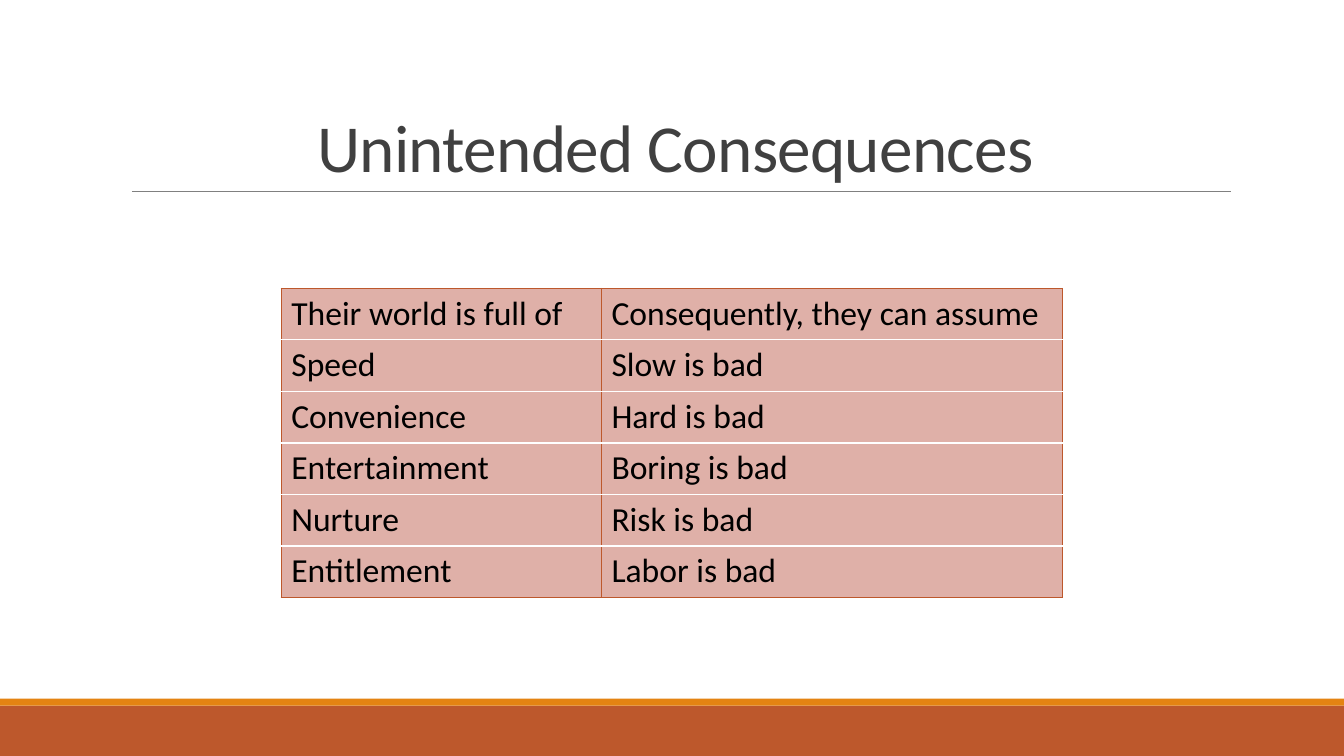
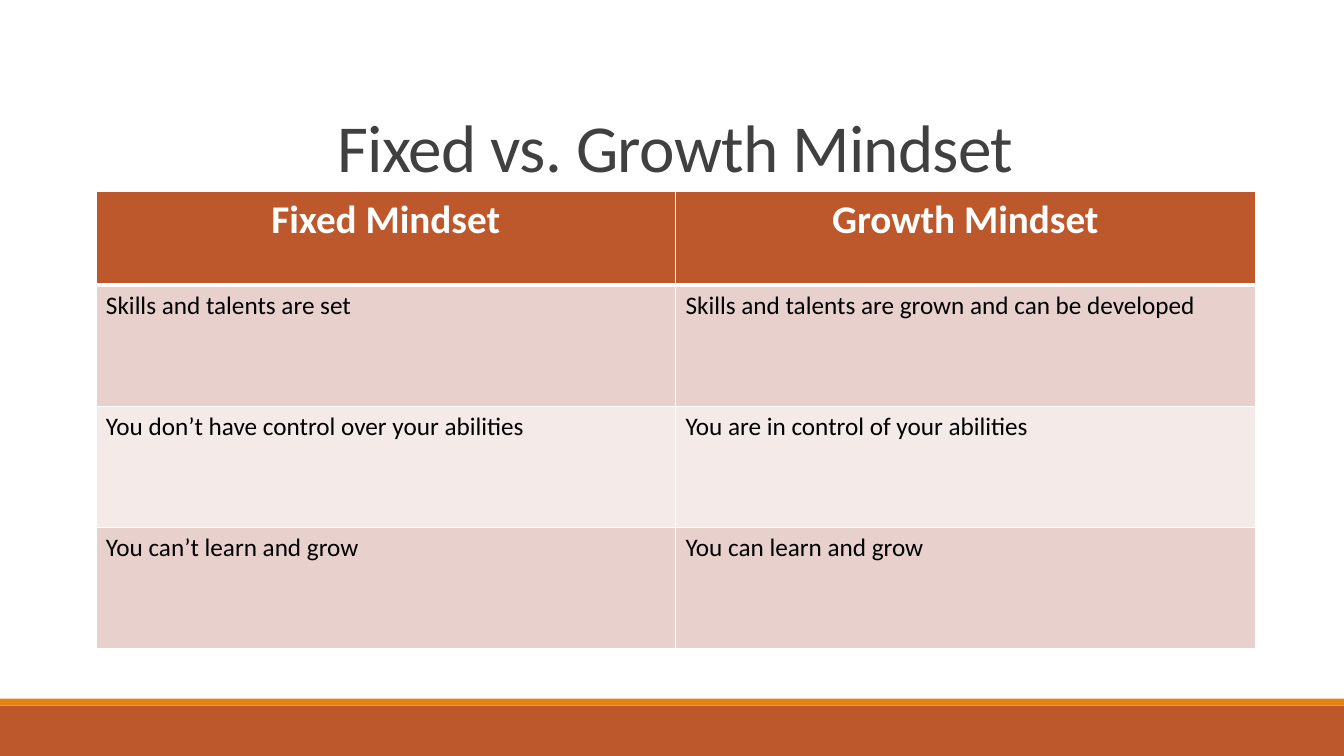
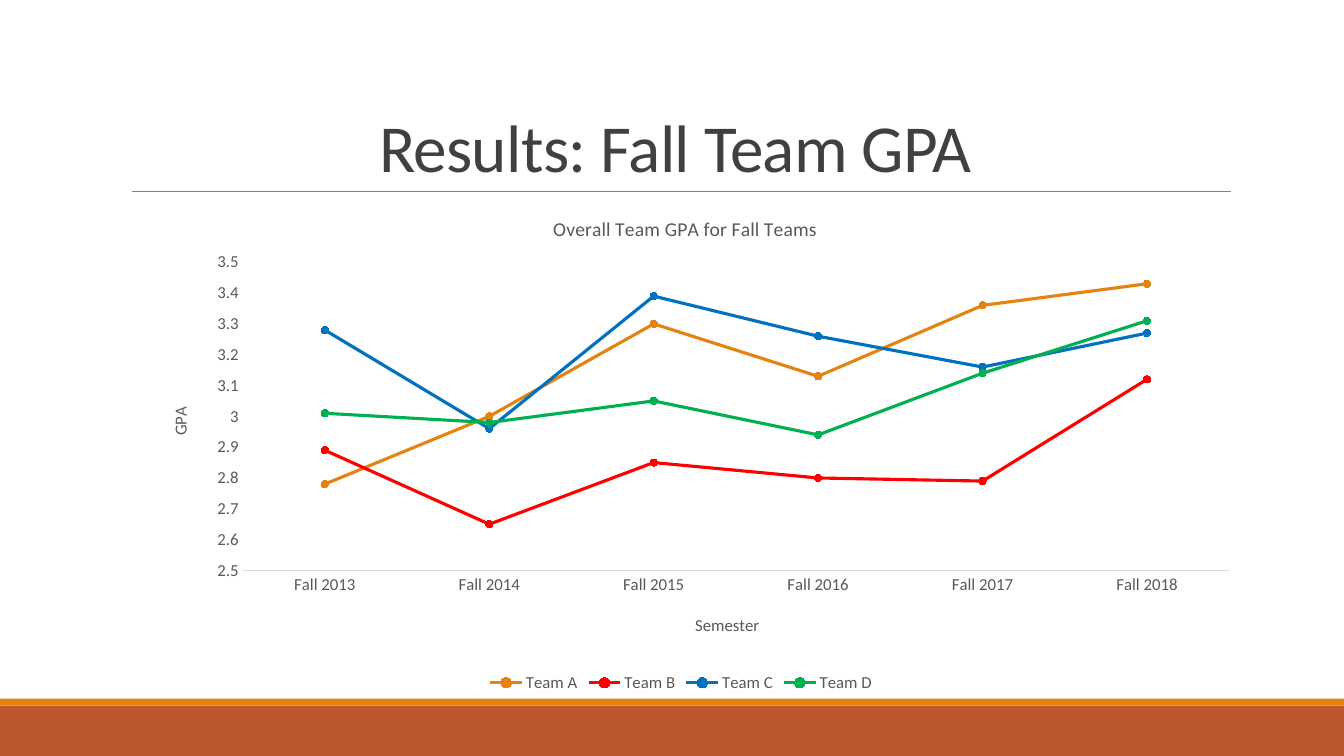
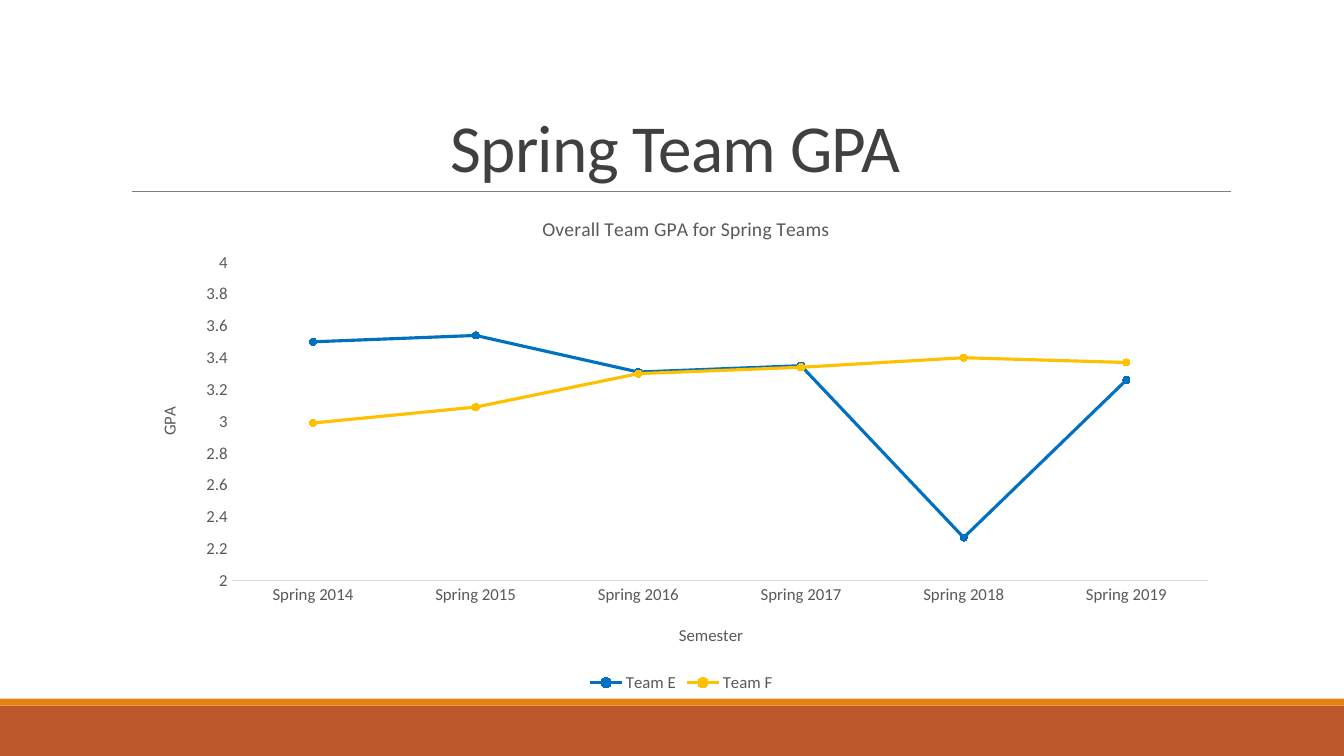
"""Build four slides on student mindset and team grade results."""
from pptx import Presentation
from pptx.chart.data import CategoryChartData
from pptx.dml.color import RGBColor
from pptx.enum.chart import XL_CHART_TYPE as ChartType, XL_LEGEND_POSITION as LegendPosition
from pptx.enum.chart import XL_MARKER_STYLE as MarkerStyle, XL_TICK_MARK as TickMark
from pptx.enum.shapes import MSO_CONNECTOR as Connector, MSO_SHAPE as Shape
from pptx.enum.text import MSO_ANCHOR as Anchor, PP_ALIGN as Align
from pptx.oxml import parse_xml
from pptx.oxml.ns import nsdecls, qn
from pptx.util import Pt

RUST = RGBColor(0xBD, 0x58, 0x2C)
ORANGE = RGBColor(0xE4, 0x83, 0x12)
GRAY = RGBColor(0x80, 0x80, 0x80)
TITLE_GRAY = RGBColor(0x40, 0x40, 0x40)
CHART_GRAY = RGBColor(0x59, 0x59, 0x59)
AXIS_GRAY = RGBColor(0xD9, 0xD9, 0xD9)
WHITE = RGBColor(0xFF, 0xFF, 0xFF)
BLACK = RGBColor(0, 0, 0)
ROSE = RGBColor(0xDF, 0xB0, 0xA8)
BAND_DARK = RGBColor(0xE8, 0xD1, 0xCD)
BAND_LIGHT = RGBColor(0xF4, 0xEA, 0xE8)
RED = RGBColor(0xFF, 0, 0)
BLUE = RGBColor(0, 0x70, 0xC0)
GREEN = RGBColor(0, 0xB0, 0x50)
YELLOW = RGBColor(0xFF, 0xC0, 0)


class Deck:
    """Hold the shared style and the current slide."""

    font = "Calibri"
    width, height = 960, 540

    def __init__(self):
        """Start an empty widescreen presentation."""
        self.presentation = Presentation()
        self.presentation.slide_width = Pt(self.width)
        self.presentation.slide_height = Pt(self.height)
        self.slide = None

    def add_slide(self, title):
        """Add a slide with its bands, divider and title."""
        self.slide = self.presentation.slides.add_slide(self.presentation.slide_layouts[6])
        self.band(504, 36, RUST)
        self.band(499, 5, ORANGE)
        self.divider()
        self.title(title)

    def band(self, top, height, color):
        """Draw a full-width band."""
        band = self.slide.shapes.add_shape(Shape.RECTANGLE, 0, Pt(top), Pt(self.width), Pt(height))
        band.shadow.inherit = False
        band.fill.solid()
        band.fill.fore_color.rgb = color
        band.line.fill.background()

    def divider(self):
        """Draw the thin line under the title."""
        line = self.slide.shapes.add_connector(Connector.STRAIGHT, Pt(94.3), Pt(136.8), Pt(879), Pt(136.8))
        line.line.color.rgb = GRAY
        line.line.width = Pt(0.5)
        line.element.spPr.append(parse_xml(f"<a:effectLst {nsdecls('a')}/>"))

    def title(self, text):
        """Add the slide title."""
        frame = self.slide.shapes.add_textbox(Pt(86.4), Pt(22.4), Pt(792), Pt(114.2)).text_frame
        frame.word_wrap = True
        frame.vertical_anchor = Anchor.BOTTOM
        paragraph = frame.paragraphs[0]
        paragraph.line_spacing = 0.85
        run = self.styled_run(paragraph, text, 48, TITLE_GRAY, align=Align.CENTER)
        run.font._element.set("spc", "-50")

    def styled_run(self, paragraph, text, size, color, bold=False, align=None):
        """Add one styled run to a paragraph."""
        paragraph.alignment = align
        run = paragraph.add_run()
        run.text = text
        run.font.name = self.font
        run.font.size = Pt(size)
        run.font.bold = bold
        run.font.color.rgb = color
        return run

    def table(self, left, top, columns, heights, rows, fills, border, size, header=None):
        """Add a table, with an emphasised first row if a header size is given."""
        frame = self.slide.shapes.add_table(len(rows), len(columns), Pt(left), Pt(top),
                                            Pt(sum(columns)), Pt(sum(heights)))
        table = frame.table
        table.first_row = table.horz_banding = False
        for column, width in zip(table.columns, columns):
            column.width = Pt(width)
        for index, (row, texts) in enumerate(zip(table.rows, rows)):
            row.height = Pt(heights[index])
            heading = header is not None and index == 0
            for cell, text in zip(row.cells, texts):
                cell.fill.solid()
                cell.fill.fore_color.rgb = fills[index]
                self.borders(cell, border, index == 0, 3 if heading else 1)
                self.styled_run(cell.text_frame.paragraphs[0], text, header if heading else size,
                                WHITE if heading else BLACK, heading, Align.CENTER if heading else None)

    def borders(self, cell, color, with_top, bottom):
        """Draw the lines around a cell."""
        widths = {"lnL": 1, "lnR": 1, "lnB": bottom}
        if with_top:
            widths = {"lnL": 1, "lnR": 1, "lnT": 1, "lnB": bottom}
        properties = cell._tc.get_or_add_tcPr()
        for position, (side, width) in enumerate(widths.items()):
            properties.insert(position, parse_xml(
                f'<a:{side} {nsdecls("a")} w="{Pt(width)}"><a:solidFill>'
                f'<a:srgbClr val="{color}"/></a:solidFill></a:{side}>'))

    def place(self, parent, position, x, y, width=None, height=None):
        """Give a chart part a manual layout in fractions of the chart."""
        for layout in parent.findall(qn("c:layout")):
            parent.remove(layout)
        target, size = "", ""
        if width is not None:
            target = '<c:layoutTarget val="inner"/>'
            size = f'<c:w val="{width}"/><c:h val="{height}"/>'
        parent.insert(position, parse_xml(
            f'<c:layout {nsdecls("c")}><c:manualLayout>{target}<c:xMode val="edge"/>'
            f'<c:yMode val="edge"/><c:x val="{x:.3f}"/><c:y val="{y:.3f}"/>{size}'
            '</c:manualLayout></c:layout>'))

    def chart_title(self, title, text, size, x, y):
        """Fill and place a chart or axis title."""
        self.styled_run(title.text_frame.paragraphs[0], text, size, CHART_GRAY)
        self.place(title.element if hasattr(title, "element") else title._element, 1, x, y)

    def line_chart(self, title, title_left, categories, series, scale, plot):
        """Add a line chart with markers, axis titles and a legend."""
        data = CategoryChartData()
        data.categories = categories
        for name, _, values in series:
            data.add_series(name, values)
        chart = self.slide.shapes.add_chart(ChartType.LINE_MARKERS, Pt(95), Pt(136.8),
                                            Pt(783.4), Pt(361), data).chart
        chart.font.name = self.font
        chart.font.size = Pt(12)
        chart.font.color.rgb = CHART_GRAY
        chart.has_title = True
        self.chart_title(chart.chart_title, title, 14, title_left, 0.04)
        chart.has_legend = True
        chart.legend.position = LegendPosition.BOTTOM
        chart.legend.include_in_layout = False

        left, top, width, height = plot
        self.place(chart._chartSpace.find(".//" + qn("c:plotArea")), 0, *plot)
        category_axis, value_axis = chart.category_axis, chart.value_axis
        for axis in (category_axis, value_axis):
            axis.major_tick_mark = axis.minor_tick_mark = TickMark.NONE
            axis.has_major_gridlines = False
        category_axis.format.line.color.rgb = AXIS_GRAY
        category_axis.format.line.width = Pt(0.75)
        value_axis.format.line.fill.background()
        value_axis.minimum_scale, value_axis.maximum_scale, value_axis.major_unit = scale
        self.chart_title(category_axis.axis_title, "Semester", 12, left + width / 2 - 0.04, top + height + 0.08)
        self.chart_title(value_axis.axis_title, "GPA", 12, left - 0.07, 0.42)
        body = value_axis.axis_title.text_frame._txBody.find(qn("a:bodyPr"))
        body.set("rot", "-5400000")
        body.set("vert", "horz")

        chart.plots[0].vary_by_categories = False
        for line, (_, color, _) in zip(chart.plots[0].series, series):
            line.smooth = False
            line.format.line.color.rgb = color
            line.format.line.width = Pt(2.25)
            line.marker.style = MarkerStyle.CIRCLE
            line.marker.size = 5
            line.marker.format.fill.solid()
            line.marker.format.fill.fore_color.rgb = color
            line.marker.format.line.color.rgb = color


def main():
    """Build and save the presentation."""
    deck = Deck()

    deck.add_slide("Unintended Consequences")
    consequences = [
        ("Their world is full of", "Consequently, they can assume"),
        ("Speed", "Slow is bad"),
        ("Convenience", "Hard is bad"),
        ("Entertainment", "Boring is bad"),
        ("Nurture", "Risk is bad"),
        ("Entitlement", "Labor is bad"),
    ]
    deck.table(200.9, 206, [228.7, 329.3], [36.8] * 6, consequences, [ROSE] * 6, RUST, 24)

    deck.add_slide("Fixed vs. Growth Mindset")
    mindsets = [
        ("Fixed Mindset", "Growth Mindset"),
        ("Skills and talents are set", "Skills and talents are grown and can be developed"),
        ("You don’t have control over your abilities", "You are in control of your abilities"),
        ("You can’t learn and grow", "You can learn and grow"),
    ]
    deck.table(68.5, 136.8, [414, 414], [67] + [86.4] * 3, mindsets,
               [RUST, BAND_DARK, BAND_LIGHT, BAND_DARK], WHITE, 18, header=28)

    deck.add_slide("Results: Fall Team GPA")
    deck.line_chart(
        "Overall Team GPA for Fall Teams", 0.38,
        [f"Fall {year}" for year in range(2013, 2019)],
        [("Team A", ORANGE, (2.78, 3, 3.3, 3.13, 3.36, 3.43)),
         ("Team B", RED, (2.89, 2.65, 2.85, 2.8, 2.79, 3.12)),
         ("Team C", BLUE, (3.28, 2.96, 3.39, 3.26, 3.16, 3.27)),
         ("Team D", GREEN, (3.01, 2.98, 3.05, 2.94, 3.14, 3.31))],
        (2.5, 3.5, 0.1), (0.1, 0.14, 0.9, 0.61))

    deck.add_slide("Spring Team GPA")
    deck.line_chart(
        "Overall Team GPA for Spring Teams", 0.37,
        [f"Spring {year}" for year in range(2014, 2020)],
        [("Team E", BLUE, (3.5, 3.54, 3.31, 3.35, 2.27, 3.26)),
         ("Team F", YELLOW, (2.99, 3.09, 3.3, 3.34, 3.4, 3.37))],
        (2, 4, 0.2), (0.09, 0.14, 0.89, 0.63))

    deck.presentation.save("out.pptx")


if __name__ == "__main__":
    main()
